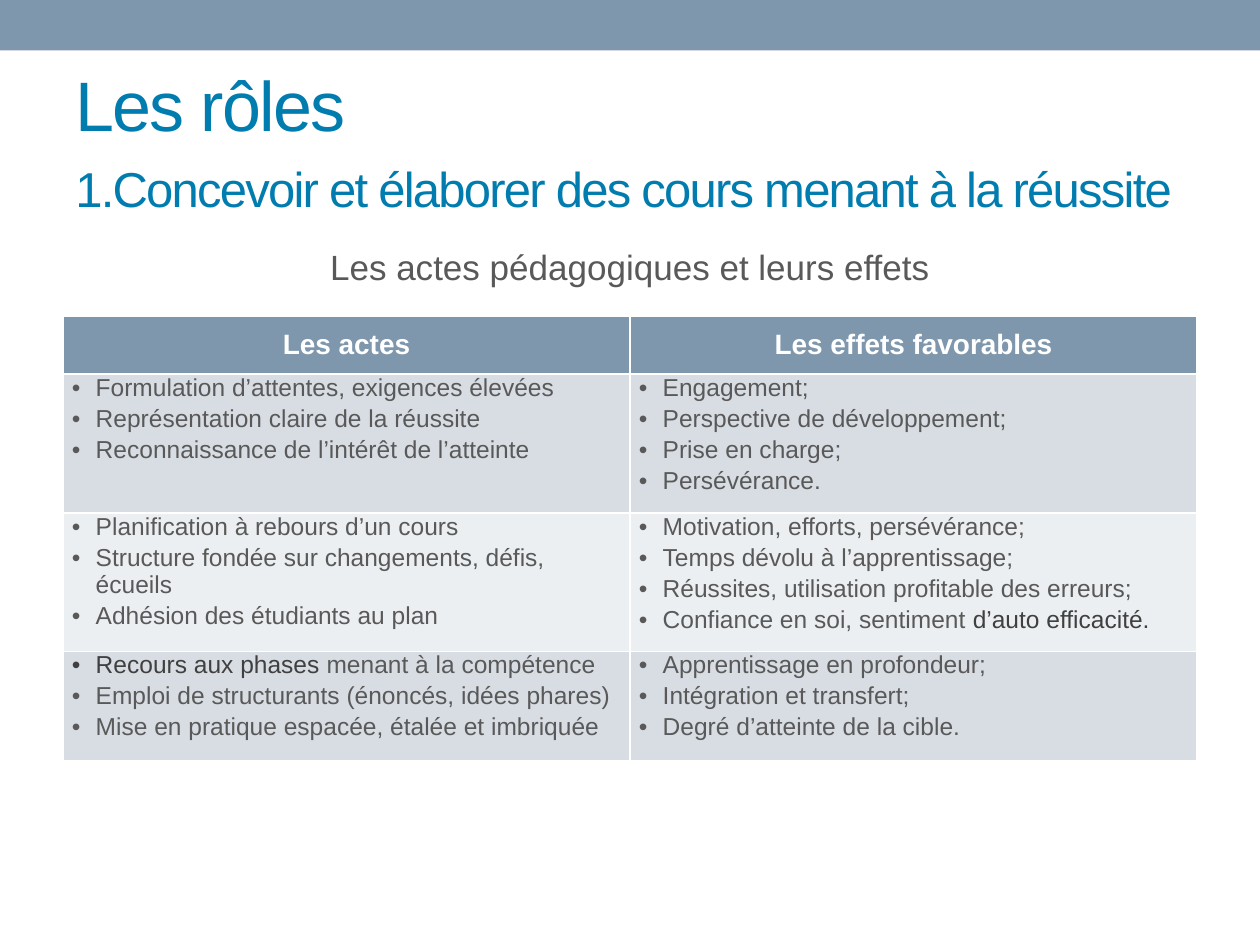
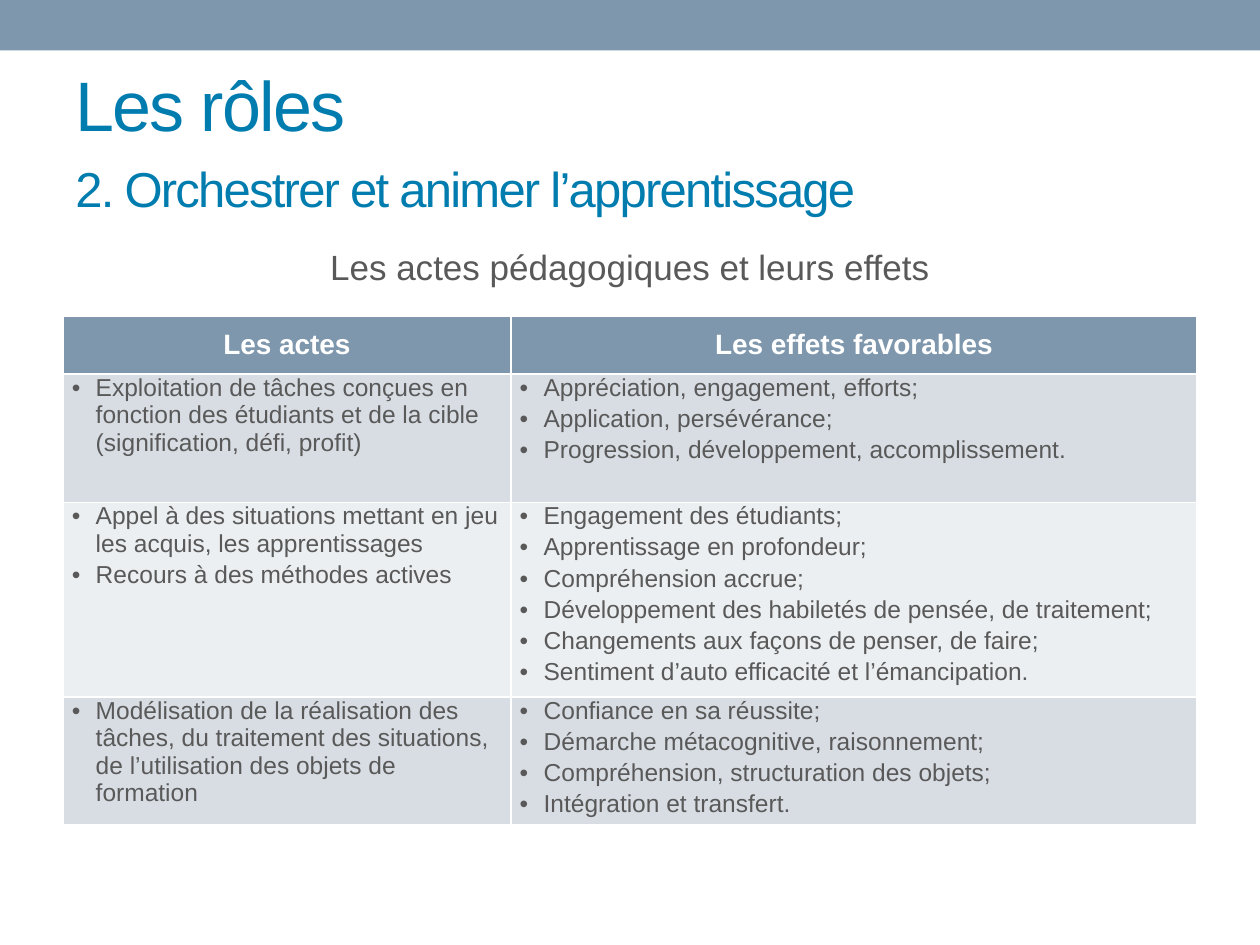
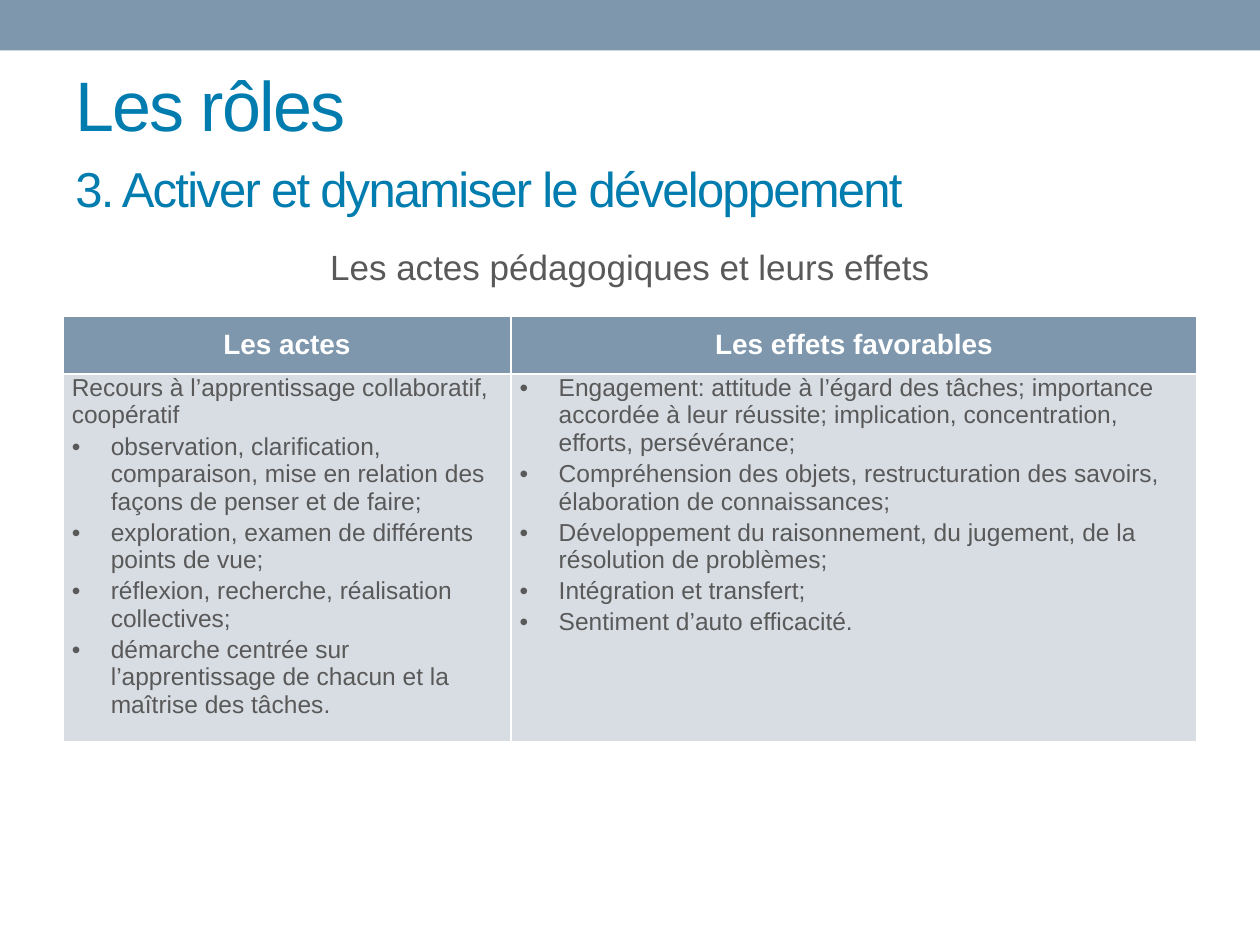
from dataclasses import dataclass
from lxml import etree
from pptx import Presentation
from pptx import util as u
from pptx.dml.color import RGBColor
from pptx.enum import shapes, text
from pptx.oxml.ns import qn


@dataclass(frozen=True)
class Theme:
    font: str = "Arial"
    band: str = "7E97AD"
    title: str = "007CAF"
    body: str = "595959"
    dark: str = "404040"
    white: str = "FFFFFF"
    rows: tuple = ("D8DDE3", "ECEFF1")
    head: int = 40
    sub: int = 28
    lead: int = 20
    label: int = 16
    small: int = 14


T = Theme()
W, H = u.Inches(10), u.Inches(7.5)
LEFT, WIDE = W * 0.05, W * 0.9
MID = text.MSO_ANCHOR.MIDDLE
CENTER = text.PP_ALIGN.CENTER


def write(frame, lines, size, color, bold=False, align=None, before=0, after=0,
          track=0, hang=0):
    """Fill a frame: '|' switches to dark text and back, '^' drops the bullet."""
    for i, line in enumerate(lines):
        para = frame.paragraphs[0] if i == 0 else frame.add_paragraph()
        para.alignment = align
        para.space_before, para.space_after = u.Pt(before), u.Pt(after)
        if hang and not line.startswith("^"):
            props = para._p.get_or_add_pPr()
            props.set("marL", str(u.Inches(hang)))
            props.set("indent", str(-u.Inches(hang)))
            etree.SubElement(props, qn("a:buFont"), typeface=T.font)
            etree.SubElement(props, qn("a:buChar"), char="•")
        for j, part in enumerate(line.lstrip("^").split("|")):
            if not part:
                continue
            run = para.add_run()
            run.text = part
            run.font.name, run.font.size, run.font.bold = T.font, u.Pt(size), bold
            run.font.color.rgb = RGBColor.from_string(T.dark if j % 2 else color)
            if track:
                run._r.get_or_add_rPr().set("spc", str(track * 100))


def grid(slide, top, cols, rows):
    """Add a table whose columns are shares of the width and rows are inches."""
    table = slide.shapes.add_table(len(rows), len(cols), int(LEFT), u.Inches(top),
                                   int(WIDE), u.Inches(sum(rows))).table
    for col, share in zip(table.columns, cols):
        col.width = int(WIDE * share)
    for row, high in zip(table.rows, rows):
        row.height = u.Inches(high)
    return table


ROLES = [
    dict(name="1.Concevoir et élaborer des cours menant à la réussite",
         share=0.5, hang=0.19, rows=[1.1, 1.1, 0.87], acts=[
             (["Formulation d’attentes, exigences élevées",
               "Représentation claire de la réussite",
               "Reconnaissance de l’intérêt de l’atteinte"],
              ["Engagement;",
               "Perspective de développement;",
               "Prise en charge;",
               "Persévérance."]),
             (["Planification à rebours d’un cours",
               "Structure fondée sur changements, défis, écueils",
               "Adhésion des étudiants au plan"],
              ["Motivation, efforts, persévérance;",
               "Temps dévolu à l’apprentissage;",
               "Réussites, utilisation profitable des erreurs;",
               "Confiance en soi, sentiment |d’auto efficacité."]),
             (["|Recours aux phases |menant à la compétence",
               "Emploi de structurants (énoncés, idées phares)",
               "Mise en pratique espacée, étalée et imbriquée"],
              ["Apprentissage en profondeur;",
               "Intégration et transfert;",
               "Degré d’atteinte de la cible."]),
         ]),
    dict(name="2. Orchestrer et animer l’apprentissage",
         share=0.395, hang=0.19, rows=[1.02, 1.4, 1], acts=[
             (["Exploitation de tâches conçues en fonction des étudiants et de la "
               "cible (signification, défi, profit)"],
              ["Appréciation, engagement, efforts;",
               "Application, persévérance;",
               "Progression, développement, accomplissement."]),
             (["Appel à des situations mettant en jeu les acquis, les apprentissages",
               "Recours à des méthodes actives"],
              ["Engagement des étudiants;",
               "Apprentissage en profondeur;",
               "Compréhension accrue;",
               "Développement des habiletés de pensée, de traitement;",
               "Changements aux façons de penser, de faire;",
               "Sentiment d’auto efficacité et l’émancipation."]),
             (["Modélisation de la réalisation des tâches, du traitement des "
               "situations, de l’utilisation des objets de formation"],
              ["Confiance en sa réussite;",
               "Démarche métacognitive, raisonnement;",
               "Compréhension, structuration des objets;",
               "Intégration et transfert."]),
         ]),
    dict(name="3. Activer et dynamiser le développement",
         share=0.395, hang=0.31, rows=[1.02], acts=[
             (["^Recours à l’apprentissage collaboratif, coopératif",
               "observation, clarification, comparaison, mise en relation des "
               "façons de penser et de faire;",
               "exploration, examen de différents points de vue;",
               "réflexion, recherche, réalisation collectives;",
               "démarche centrée sur l’apprentissage de chacun et la maîtrise "
               "des tâches."],
              ["Engagement: attitude à l’égard des tâches; importance accordée à "
               "leur réussite; implication, concentration, efforts, persévérance;",
               "Compréhension des objets, restructuration des savoirs, "
               "élaboration de connaissances;",
               "Développement du raisonnement, du jugement, de la résolution de "
               "problèmes;",
               "Intégration et transfert;",
               "Sentiment d’auto efficacité."]),
         ]),
]

deck = Presentation()
deck.slide_width, deck.slide_height = W, H

for role in ROLES:
    slide = deck.slides.add_slide(deck.slide_layouts[6])

    band = slide.shapes.add_shape(shapes.MSO_SHAPE.RECTANGLE, 0, 0, W, u.Inches(0.4))
    band.shadow.inherit = False
    band.fill.solid()
    band.fill.fore_color.rgb = RGBColor.from_string(T.band)
    band.line.fill.background()

    for line, top, high, size in [("Les rôles", 0.58, 0.49, T.head),
                                  (role["name"], 1.23, 0.53, T.sub)]:
        frame = slide.shapes.add_textbox(int(LEFT), u.Inches(top), int(WIDE),
                                         u.Inches(high)).text_frame
        frame.word_wrap, frame.vertical_anchor = True, MID
        write(frame, [line], size, T.title, track=-1)

    lead = grid(slide, 1.91, [1], [0.41]).cell(0, 0)
    lead.fill.background()
    lead.vertical_anchor = MID
    write(lead.text_frame, ["Les actes pédagogiques et leurs effets"], T.lead, T.body,
          align=CENTER)

    table = grid(slide, 2.51, [role["share"], 1 - role["share"]], [0.46] + role["rows"])
    heads = (["Les actes"], ["Les effets favorables"])
    for r, pair in enumerate([heads] + role["acts"]):
        for c, lines in enumerate(pair):
            cell = table.cell(r, c)
            cell.margin_left = cell.margin_right = u.Inches(0.07)
            cell.margin_top = cell.margin_bottom = 0
            cell.fill.solid()
            cell.fill.fore_color.rgb = RGBColor.from_string(
                T.rows[(r - 1) % 2] if r else T.band)
            if r:
                write(cell.text_frame, lines, T.small, T.body, before=2,
                      hang=role["hang"])
            else:
                cell.vertical_anchor = MID
                write(cell.text_frame, lines, T.label, T.white, bold=True,
                      align=CENTER, before=6, after=6)

deck.save("out.pptx")
